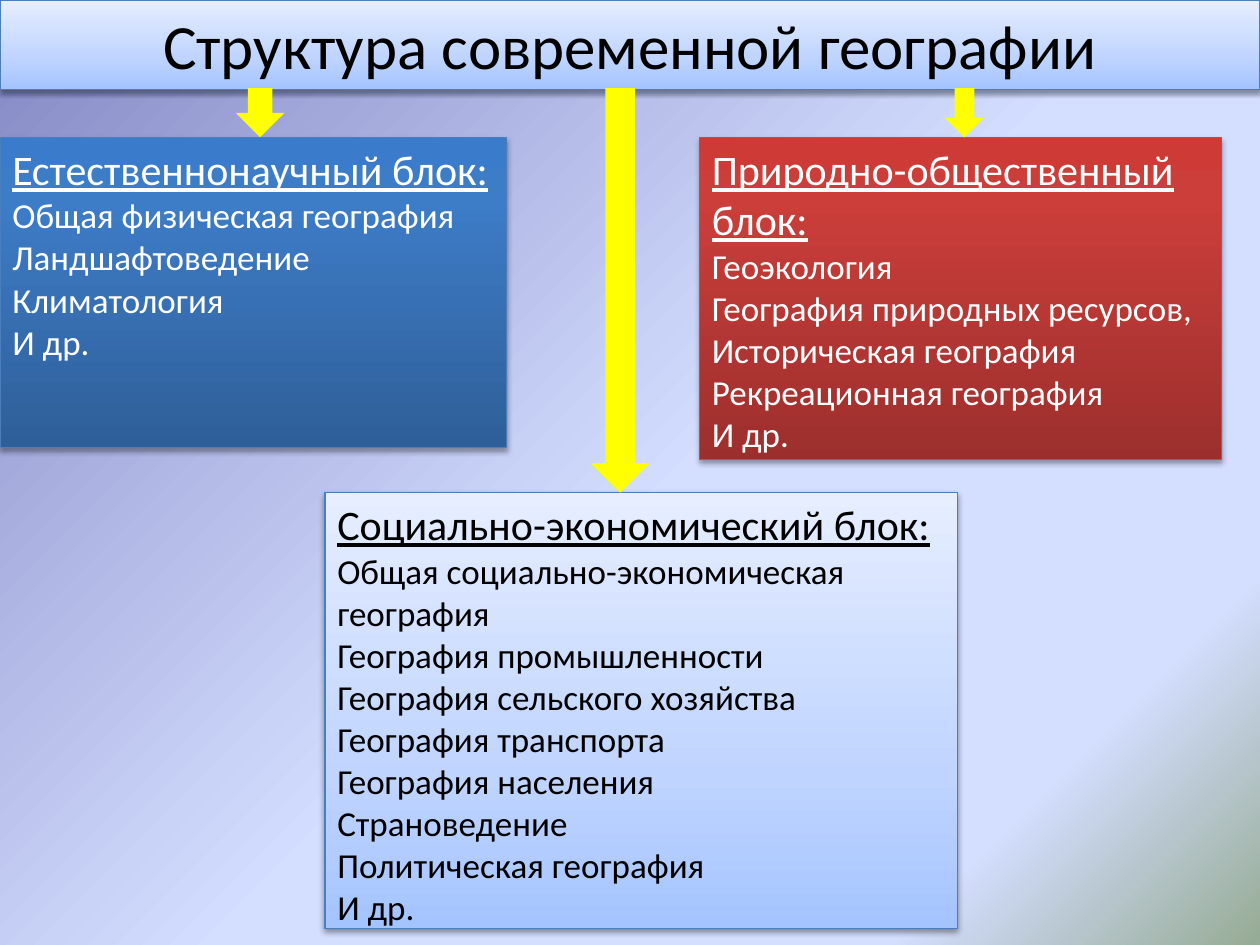
from lxml import etree
from pptx import Presentation
from pptx.dml.color import RGBColor
from pptx.enum.shapes import MSO_SHAPE
from pptx.enum.text import MSO_ANCHOR, MSO_AUTO_SIZE, PP_ALIGN
from pptx.oxml.ns import qn
from pptx.util import Cm, Pt

RECT = MSO_SHAPE.RECTANGLE
DOWN_ARROW = MSO_SHAPE.DOWN_ARROW
TOP = MSO_ANCHOR.TOP
NO_AUTOFIT = MSO_AUTO_SIZE.NONE
LEFT, CENTER = PP_ALIGN.LEFT, PP_ALIGN.CENTER

BLACK = RGBColor(0x00, 0x00, 0x00)
WHITE = RGBColor(0xFF, 0xFF, 0xFF)
YELLOW = RGBColor(0xFF, 0xFF, 0x00)
BLUE_LINE = RGBColor(0x4B, 0x7E, 0xBC)
RED_LINE = RGBColor(0xBF, 0x4C, 0x48)

BACKGROUND = [
    (0, RGBColor(0x84, 0x88, 0xC4)),
    (53, RGBColor(0xD4, 0xDE, 0xFF)),
    (83, RGBColor(0xD4, 0xDE, 0xFF)),
    (100, RGBColor(0x96, 0xAB, 0x94)),
]
PALE_BLUE = [
    (0, RGBColor(0xA4, 0xC4, 0xFF)),
    (35, RGBColor(0xBF, 0xD4, 0xFF)),
    (100, RGBColor(0xE6, 0xEE, 0xFF)),
]
DEEP_BLUE = [
    (0, RGBColor(0x2F, 0x5F, 0x99)),
    (80, RGBColor(0x3D, 0x7C, 0xC7)),
    (100, RGBColor(0x3A, 0x7C, 0xCB)),
]
RED = [
    (0, RGBColor(0x9C, 0x2F, 0x2D)),
    (80, RGBColor(0xCB, 0x3E, 0x3A)),
    (100, RGBColor(0xCE, 0x3B, 0x37)),
]

FONT = "Calibri"
ARROW_TOP = 1.78
ROW_TOP = 2.77
PALE_SHADOW = (38, 1.6)
DEEP_SHADOW = (35, 1.8)

NATURAL = [
    "Естественнонаучный блок:",
    "Общая физическая география",
    "Ландшафтоведение",
    "Климатология",
    "И др.",
]
MIXED = [
    "Природно-общественный блок:",
    "Геоэкология",
    "География природных ресурсов,",
    "Историческая география",
    "Рекреационная география",
    "И др.",
]
SOCIAL = [
    "Социально-экономический блок:",
    "Общая социально-экономическая география",
    "География промышленности",
    "География сельского хозяйства",
    "География транспорта",
    "География населения",
    "Страноведение",
    "Политическая география",
    "И др.",
]


def set_gradient(fill, element, stops, angle):
    fill.gradient()
    grad = next(element.iter(qn("a:gradFill")))
    gs_list = grad.find(qn("a:gsLst"))
    for gs in list(gs_list):
        gs_list.remove(gs)
    for position, color in stops:
        gs = etree.SubElement(gs_list, qn("a:gs"), pos=str(position * 1000))
        etree.SubElement(gs, qn("a:srgbClr"), val=str(color))
    grad.find(qn("a:lin")).set("ang", str(angle * 60000))


def add_shadow(sp, opacity, distance):
    sp.shadow.inherit = False
    effects = sp._element.spPr.find(qn("a:effectLst"))
    shadow = etree.SubElement(
        effects, qn("a:outerShdw"), blurRad=str(Pt(3.1)),
        dist=str(Pt(distance)), dir="5400000", rotWithShape="0")
    color = etree.SubElement(shadow, qn("a:srgbClr"), val=str(BLACK))
    etree.SubElement(color, qn("a:alpha"), val=str(opacity * 1000))


def style_panel(sp, stops, line, shadow):
    set_gradient(sp.fill, sp._element, stops, 270)
    sp.line.color.rgb = line
    sp.line.width = Pt(0.75)
    add_shadow(sp, *shadow)
    tf = sp.text_frame
    tf.word_wrap = True
    tf.auto_size = NO_AUTOFIT
    tf.vertical_anchor = TOP


def format_paragraph(p, size, color, align):
    p.alignment = align
    p.font.name = FONT
    p.font.size = Pt(size)
    p.font.color.rgb = color


def set_title(s, text):
    sp = s.shapes.title
    sp.left, sp.top, sp.width, sp.height = Cm(0), Cm(0), Cm(25.4), Cm(1.8)
    sp.text_frame.text = text
    style_panel(sp, PALE_BLUE, BLUE_LINE, PALE_SHADOW)
    format_paragraph(sp.text_frame.paragraphs[0], 36, BLACK, CENTER)


def add_block(s, box, lines, stops, line, shadow, color):
    sp = s.shapes.add_shape(RECT, *map(Cm, box))
    style_panel(sp, stops, line, shadow)
    tf = sp.text_frame
    tf.text = "\n".join(lines)
    for i, p in enumerate(tf.paragraphs):
        format_paragraph(p, 20 if i else 24, color, LEFT)
        p.font.underline = i == 0


def add_arrow(s, left, width, bottom):
    sp = s.shapes.add_shape(DOWN_ARROW, Cm(left), Cm(ARROW_TOP),
                            Cm(width), Cm(bottom - ARROW_TOP))
    sp.fill.solid()
    sp.fill.fore_color.rgb = YELLOW
    sp.line.fill.background()
    sp.shadow.inherit = False


def main():
    prs = Presentation()
    prs.slide_width, prs.slide_height = Cm(25.4), Cm(19.05)
    s = prs.slides.add_slide(prs.slide_layouts[5])
    set_gradient(s.background.fill, s._element, BACKGROUND, 45)
    set_title(s, "Структура современной географии")

    social_top = 9.93
    add_block(s, (0, ROW_TOP, 10.21, 6.25), NATURAL,
              DEEP_BLUE, BLUE_LINE, DEEP_SHADOW, WHITE)
    add_block(s, (14.1, ROW_TOP, 10.52, 6.5), MIXED,
              RED, RED_LINE, DEEP_SHADOW, WHITE)
    add_block(s, (6.55, social_top, 12.75, 8.79), SOCIAL,
              PALE_BLUE, BLUE_LINE, PALE_SHADOW, BLACK)

    add_arrow(s, 4.75, 0.99, ROW_TOP)
    add_arrow(s, 19.05, 0.79, ROW_TOP)
    add_arrow(s, 11.91, 1.19, social_top)
    prs.save("out.pptx")


if __name__ == "__main__":
    main()
